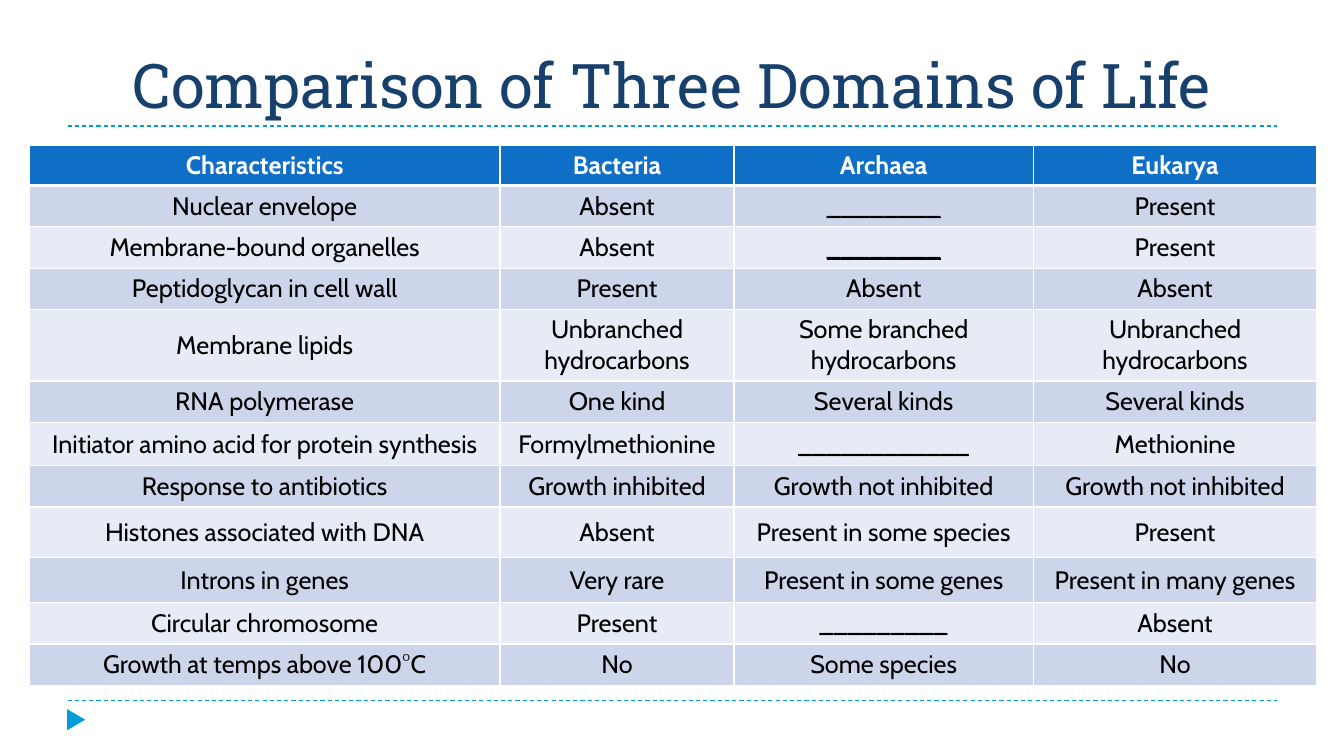
from lxml.etree import SubElement
from pptx import Presentation
from pptx.dml.color import RGBColor
from pptx.enum.dml import MSO_LINE
from pptx.enum.shapes import MSO_CONNECTOR, MSO_SHAPE
from pptx.enum.text import MSO_ANCHOR as ANCHOR, PP_ALIGN as ALIGN
from pptx.oxml.ns import qn
from pptx.util import Inches, Pt

NAVY = RGBColor(0x17, 0x40, 0x6D)
BLUE = RGBColor(0x0F, 0x6F, 0xC6)
CYAN = RGBColor(0x00, 0x9D, 0xD9)
DARK = RGBColor(0xCC, 0xD5, 0xEA)
PALE = RGBColor(0xE7, 0xEB, 0xF5)
WHITE = RGBColor(0xFF, 0xFF, 0xFF)
BLACK = RGBColor(0x00, 0x00, 0x00)

WIDTHS = [4.67, 2.32, 2.97, 2.81]
HEIGHTS = [0.4, 0.41, 0.41, 0.41, 0.71, 0.41, 0.43, 0.41, 0.5, 0.45, 0.41, 0.41]
ROWS = [
    ["Characteristics", "Bacteria", "Archaea", "Eukarya"],
    ["Nuclear envelope", "Absent", "________", "Present"],
    ["Membrane-bound organelles", "Absent", "________", "Present"],
    ["Peptidoglycan in cell wall", "Present", "Absent", "Absent"],
    ["Membrane lipids", "Unbranched hydrocarbons", "Some branched hydrocarbons",
     "Unbranched hydrocarbons"],
    ["RNA polymerase", "One kind", "Several kinds", "Several kinds"],
    ["Initiator amino acid for protein synthesis", "Formylmethionine",
     "____________", "Methionine"],
    ["Response to antibiotics", "Growth inhibited", "Growth not inhibited",
     "Growth not inhibited"],
    ["Histones associated with DNA", "Absent", "Present in some species", "Present"],
    ["Introns in genes", "Very rare", "Present in some genes", "Present in many genes"],
    ["Circular chromosome", "Present", "_________", "Absent"],
    ["Growth at temps above 100°C", "No", "Some species", "No"],
]
LINED = [(1, 2), (2, 2), (6, 2)]  # underlined blanks, as (row, column)


def style(par, face, size, color):
    par.alignment = ALIGN.CENTER
    font = par.runs[0].font
    font.name, font.size = face, Pt(size)
    font.color.rgb = color
    return font


def edge(cell, side, width):
    """Draw a white border on one side (L, R, T or B) of a cell."""
    line = SubElement(cell._tc.get_or_add_tcPr(), qn(f"a:ln{side}"), w=str(Pt(width)))
    fill = SubElement(line, qn("a:solidFill"))
    SubElement(fill, qn("a:srgbClr"), val=str(WHITE))


prs = Presentation()
prs.slide_width, prs.slide_height = Inches(13.33), Inches(7.5)
slide = prs.slides.add_slide(prs.slide_layouts[6])
shapes = slide.shapes

# Dashed rules and corner marker
for y in (6.95, 1.25):
    rule = shapes.add_connector(MSO_CONNECTOR.STRAIGHT, Inches(0.67), Inches(y),
                                Inches(12.67), Inches(y))
    rule.line.color.rgb = CYAN
    rule.line.width = Pt(0.75)
    rule.line.dash_style = MSO_LINE.DASH
    SubElement(rule._element.spPr, qn("a:effectLst"))

mark = shapes.add_shape(MSO_SHAPE.ISOSCELES_TRIANGLE, Inches(0.65), Inches(7.05),
                        Inches(0.21), Inches(0.18))
mark.rotation = 90
mark.shadow.inherit = False
mark.fill.solid()
mark.fill.fore_color.rgb = CYAN
mark.line.fill.background()

# Title
title = shapes.add_textbox(Inches(0.67), Inches(0.17), Inches(12), Inches(1.08))
frame = title.text_frame
frame.word_wrap = True
frame.vertical_anchor = ANCHOR.BOTTOM
frame.text = "Comparison of Three Domains of Life"
style(frame.paragraphs[0], "Roboto Slab", 44, NAVY)

# Comparison table
table = shapes.add_table(len(ROWS), len(WIDTHS), Inches(0.29), Inches(1.44),
                         Inches(12.78), Inches(5.34)).table
for col, width in zip(table.columns, WIDTHS):
    col.width = Inches(width)
for row, height in zip(table.rows, HEIGHTS):
    row.height = Inches(height)

for r, texts in enumerate(ROWS):
    head = r == 0
    shade = BLUE if head else DARK if r % 2 else PALE
    for c, text in enumerate(texts):
        cell = table.cell(r, c)
        cell.text = text
        cell.vertical_anchor = ANCHOR.MIDDLE
        font = style(cell.text_frame.paragraphs[0], "Cabin", 18,
                     WHITE if head else BLACK)
        font.bold = head
        font.underline = (r, c) in LINED
        for side in "LRTB":
            thick = (head and side == "B") or (r == 1 and side == "T")
            edge(cell, side, 3 if thick else 1)
        cell.fill.solid()
        cell.fill.fore_color.rgb = shade

prs.save("out.pptx")
